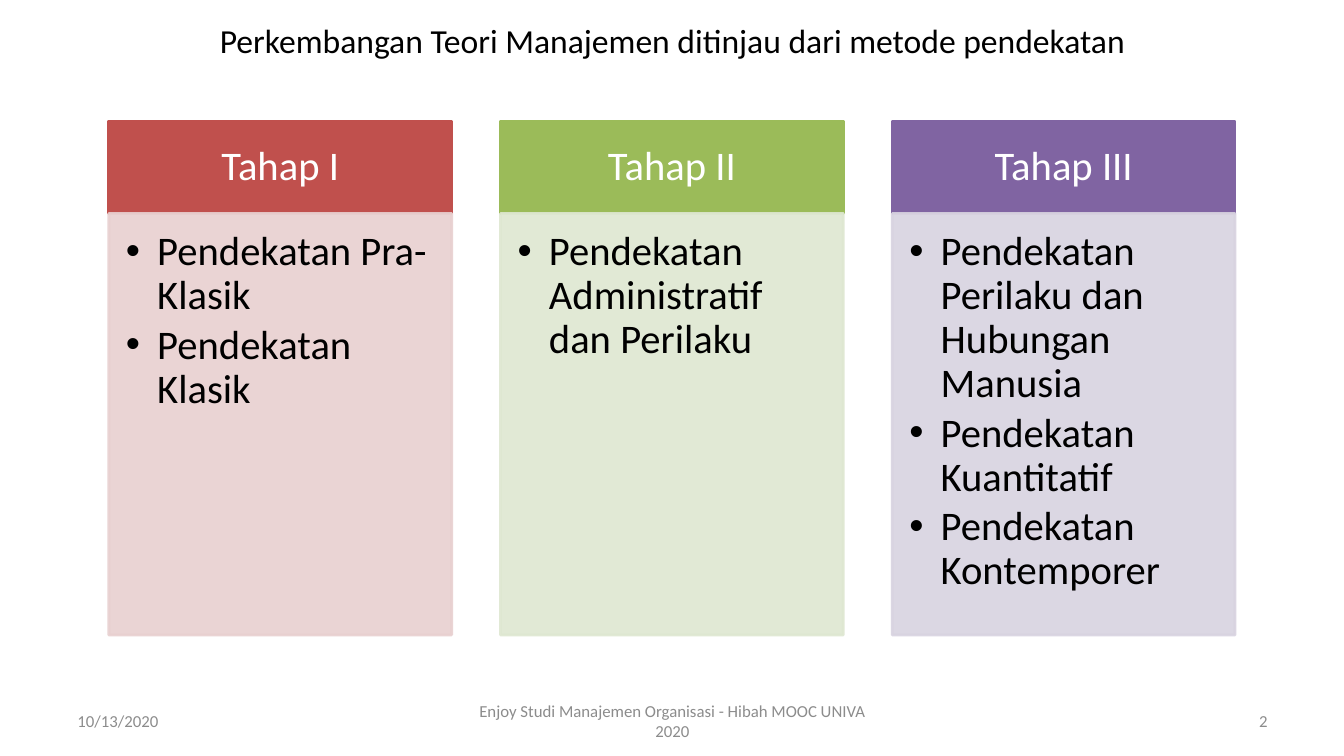
from lxml import etree
from pptx import Presentation
from pptx import util as u
from pptx.dml.color import RGBColor
from pptx.enum import shapes, text
from pptx.oxml.ns import qn

WIDTH, HEIGHT = 13.33, 7.5
FONT = "Calibri"
COLORS = {
    "black": "000000", "white": "FFFFFF", "gray": "8C8C8C",
    "red": "C0504D", "red_tint": "E8D0D0",
    "green": "9BBB59", "green_tint": "DEE7D1",
    "purple": "8064A2", "purple_tint": "D8D3E0",
}
STAGES = [
    ("Tahap I", "red", ["Pendekatan Pra-Klasik", "Pendekatan Klasik"]),
    ("Tahap II", "green", ["Pendekatan Administratif dan Perilaku"]),
    ("Tahap III", "purple", [
        "Pendekatan Perilaku dan Hubungan Manusia",
        "Pendekatan Kuantitatif",
        "Pendekatan Kontemporer",
    ]),
]
LEFT, CENTER, RIGHT = text.PP_ALIGN.LEFT, text.PP_ALIGN.CENTER, text.PP_ALIGN.RIGHT
TOP, MIDDLE = text.MSO_ANCHOR.TOP, text.MSO_ANCHOR.MIDDLE


def rgb(name):
    return RGBColor.from_string(COLORS[name])


def write(shape, lines, size, color, align, anchor, insets=(0.1, 0.05, 0.1, 0.05)):
    frame = shape.text_frame
    frame.word_wrap = True
    frame.vertical_anchor = anchor
    frame.margin_left, frame.margin_top, frame.margin_right, frame.margin_bottom = map(u.Inches, insets)
    frame.text = "\n".join(lines)
    for paragraph in frame.paragraphs:
        paragraph.alignment = align
        for run in paragraph.runs:
            run.font.name = FONT
            run.font.size = u.Pt(size)
            run.font.color.rgb = rgb(color)
    return frame


def add_label(slide, box, content, size, color, align, anchor):
    label = slide.shapes.add_textbox(*map(u.Inches, box))
    write(label, [content], size, color, align, anchor)


def add_panel(slide, box, color, opacity=100):
    panel = slide.shapes.add_shape(shapes.MSO_SHAPE.RECTANGLE, *map(u.Inches, box))
    panel.shadow.inherit = False
    panel.fill.solid()
    panel.fill.fore_color.rgb = rgb(color)
    panel.line.color.rgb = rgb(color)
    panel.line.width = u.Pt(2)
    if opacity < 100:
        for color_element in panel._element.spPr.iter(qn("a:srgbClr")):
            etree.SubElement(color_element, qn("a:alpha"), val=str(opacity * 1000))
    return panel


def add_bullet(paragraph, indent=0.31):
    properties = paragraph._p.get_or_add_pPr()
    properties.set("marL", str(u.Inches(indent)))
    properties.set("indent", str(-u.Inches(indent)))
    etree.SubElement(properties, qn("a:buFont"), typeface="Arial")
    etree.SubElement(properties, qn("a:buChar"), char="•")


def add_stage(slide, box, name, color, approaches):
    left, top, width, height = box
    header_height = 0.18 * height
    header = add_panel(slide, (left, top, width, header_height), color)
    frame = write(header, [name], 29, "white", CENTER, MIDDLE, (0.23, 0.13, 0.23, 0.13))
    frame.paragraphs[0].line_spacing = 0.9

    body_box = (left, top + header_height, width, height - header_height)
    body = add_panel(slide, body_box, f"{color}_tint", opacity=90)
    frame = write(body, approaches, 29, "black", LEFT, TOP, (0.17, 0.17, 0.23, 0.25))
    for paragraph in frame.paragraphs:
        paragraph.line_spacing = 0.9
        paragraph.space_after = u.Pt(4.35)
        add_bullet(paragraph)


def add_stages(slide, box):
    left, top, width, height = box
    column_width = 3.4
    step = (width - column_width) / (len(STAGES) - 1)
    for column, stage in enumerate(STAGES):
        add_stage(slide, (left + column * step, top, column_width, height), *stage)


def add_footer(slide, box):
    left, top, width, height = box
    side, middle = 0.26 * width, 0.352 * width
    parts = [
        (left, side, "10/13/2020", LEFT),
        (left + (width - middle) / 2, middle,
         "Enjoy Studi Manajemen Organisasi - Hibah MOOC UNIVA 2020", CENTER),
        (left + width - side, side, "2", RIGHT),
    ]
    for part_left, part_width, content, align in parts:
        add_label(slide, (part_left, top, part_width, height), content, 12, "gray", align, MIDDLE)


def main():
    presentation = Presentation()
    presentation.slide_width = u.Inches(WIDTH)
    presentation.slide_height = u.Inches(HEIGHT)
    slide = presentation.slides.add_slide(presentation.slide_layouts[6])
    add_label(slide, (1.89, 0.15, 9.56, 0.5),
              "Perkembangan Teori Manajemen ditinjau dari metode pendekatan",
              24, "black", CENTER, TOP)
    add_stages(slide, (1.08, 1.2, 11.17, 5.1))
    add_footer(slide, (0.67, 6.95, 12, 0.4))
    presentation.save("out.pptx")


if __name__ == "__main__":
    main()
